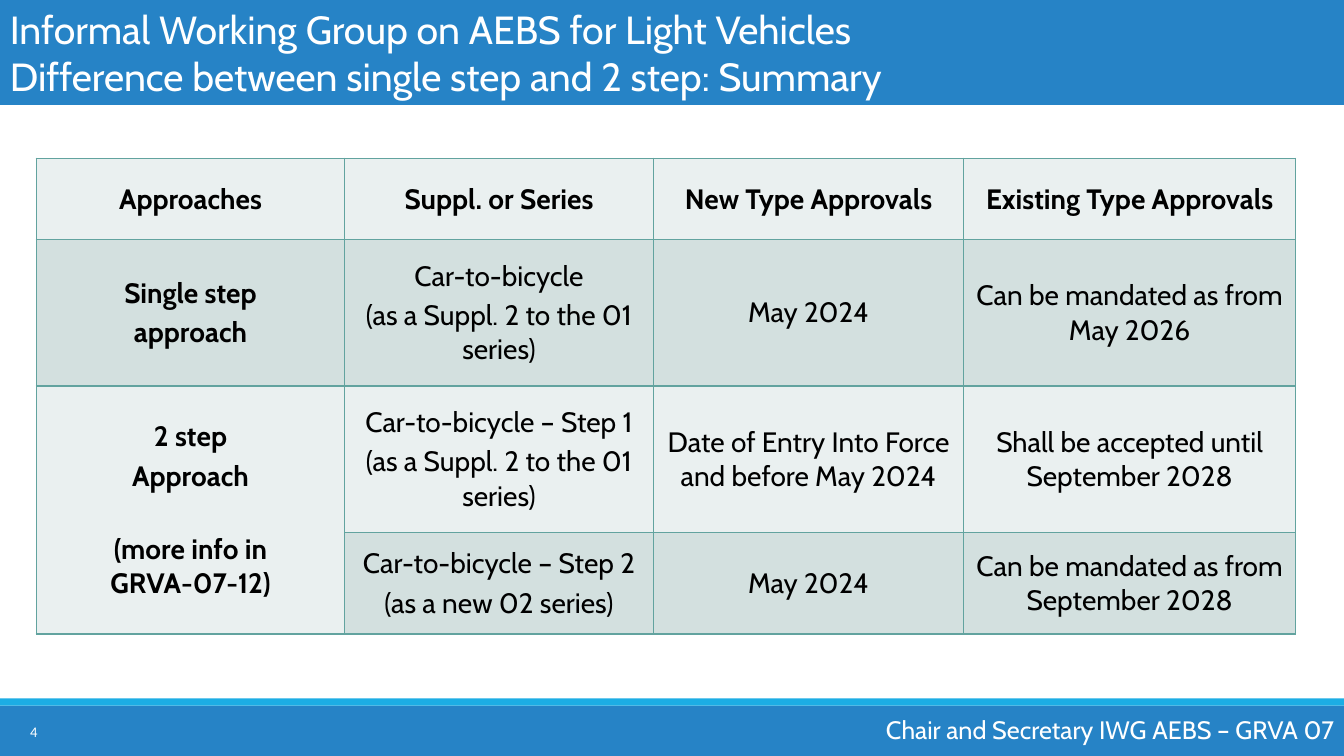
from lxml import etree
from pptx import Presentation
from pptx.dml.color import RGBColor
from pptx.enum.shapes import MSO_SHAPE
from pptx.enum.text import MSO_ANCHOR as Anchor, PP_ALIGN as Align
from pptx.oxml import parse_xml
from pptx.oxml.ns import nsdecls, qn
from pptx.util import Inches, Pt

BLUE = RGBColor(0x26, 0x83, 0xC6)
CYAN = RGBColor(0x1C, 0xAD, 0xE4)
WHITE = RGBColor(0xFF, 0xFF, 0xFF)
BLACK = RGBColor(0, 0, 0)
PALE = RGBColor(0xEA, 0xF0, 0xF0)
SAGE = RGBColor(0xD3, 0xE0, 0xDF)
TEAL = RGBColor(0x62, 0xA3, 0x9F)

COLUMN_WIDTHS = [3.06, 3.06, 3.08, 3.29]
ROW_HEIGHTS = [0.81, 1.45, 1.45, 1.01]
SUPPLEMENT = "(as a Suppl. 2 to the 01 series)"
APPROACHES = [
    [["Approaches"], ["Suppl. or Series"], ["New Type Approvals"], ["Existing Type Approvals"]],
    [["Single step", "approach"], ["Car-to-bicycle", SUPPLEMENT],
     ["May 2024"], ["Can be mandated as from May 2026"]],
    [["2 step", "Approach", "(more info in\nGRVA-07-12)"],
     ["Car-to-bicycle – Step 1", SUPPLEMENT],
     ["Date of Entry Into Force and before May 2024"],
     ["Shall be accepted until September 2028"]],
    [[], ["Car-to-bicycle – Step 2", "(as a new 02 series)"],
     ["May 2024"], ["Can be mandated as from September 2028"]],
]


class SlideBuilder:
    font = "Cabin"

    def __init__(self, slide):
        self.slide = slide

    def add_lines(self, frame, lines, size, color, align=Align.LEFT, bold=False, font=None):
        for index, line in enumerate(lines):
            paragraph = frame.add_paragraph() if index else frame.paragraphs[0]
            paragraph.alignment = align
            for part_index, part in enumerate(line.split("\n")):
                if part_index:
                    paragraph.add_line_break()
                run = paragraph.add_run()
                run.text = part
                run.font.name = font or self.font
                run.font.size = Pt(size)
                run.font.bold = bold
                run.font.color.rgb = color

    def bar(self, top, height, color):
        shape = self.slide.shapes.add_shape(
            MSO_SHAPE.RECTANGLE, 0, Inches(top), Inches(13.33), Inches(height))
        shape.shadow.inherit = False
        shape.fill.solid()
        shape.fill.fore_color.rgb = color
        shape.line.fill.background()
        return shape

    def label(self, left, top, width, height, text, size, font=None):
        box = self.slide.shapes.add_textbox(
            Inches(left), Inches(top), Inches(width), Inches(height))
        box.text_frame.word_wrap = True
        box.text_frame.vertical_anchor = Anchor.MIDDLE
        self.add_lines(box.text_frame, [text], size, WHITE, Align.RIGHT, font=font)

    def style_cell(self, cell, fill):
        cell.margin_left = cell.margin_right = cell.margin_top = cell.margin_bottom = 0
        cell.vertical_anchor = Anchor.MIDDLE
        properties = cell._tc.get_or_add_tcPr()
        for side in "LRTB":
            border = parse_xml(f'<a:ln{side} {nsdecls("a")} w="{Pt(1)}"/>')
            solid = etree.SubElement(border, qn("a:solidFill"))
            etree.SubElement(solid, qn("a:srgbClr"), val=str(TEAL))
            properties.append(border)
        cell.fill.solid()
        cell.fill.fore_color.rgb = fill

    def table(self, left, top, widths, heights, rows):
        table = self.slide.shapes.add_table(
            len(heights), len(widths), Inches(left), Inches(top),
            Inches(sum(widths)), Inches(sum(heights))).table
        for column, width in zip(table.columns, widths):
            column.width = Inches(width)
        for row, height in zip(table.rows, heights):
            row.height = Inches(height)
        for row_index, row in enumerate(rows):
            for column_index, lines in enumerate(row):
                cell = table.cell(row_index, column_index)
                self.style_cell(cell, SAGE if row_index % 2 else PALE)
                self.add_lines(cell.text_frame, lines, 20, BLACK, Align.CENTER,
                               bold=row_index == 0 or column_index == 0)
                for index, paragraph in enumerate(cell.text_frame.paragraphs):
                    paragraph.space_before = Pt(2 if index else 0)
                    paragraph.space_after = Pt(2 if row_index else 0)
        return table


def main():
    presentation = Presentation()
    presentation.slide_width = Inches(13.33)
    presentation.slide_height = Inches(7.5)
    builder = SlideBuilder(presentation.slides.add_slide(presentation.slide_layouts[6]))

    builder.bar(7, 0.5, BLUE)
    builder.bar(6.93, 0.07, CYAN)
    builder.label(0, 7.06, 0.47, 0.4, "4", 10.5, "Calibri")

    title = builder.bar(0, 1.04, BLUE).text_frame
    title.word_wrap = True
    title.vertical_anchor = Anchor.TOP
    builder.add_lines(title, ["Informal Working Group on AEBS for Light Vehicles",
                              "Difference between single step and 2 step: Summary"], 28, WHITE)

    table = builder.table(0.36, 1.57, COLUMN_WIDTHS, ROW_HEIGHTS, APPROACHES)
    two_step = table.cell(2, 0)
    two_step.merge(table.cell(3, 0))
    two_step.text_frame.paragraphs[-1].space_before = Pt(26)

    builder.label(8.42, 7.04, 4.91, 0.4, "Chair and Secretary IWG AEBS – GRVA 07", 18)
    presentation.save("out.pptx")


if __name__ == "__main__":
    main()
